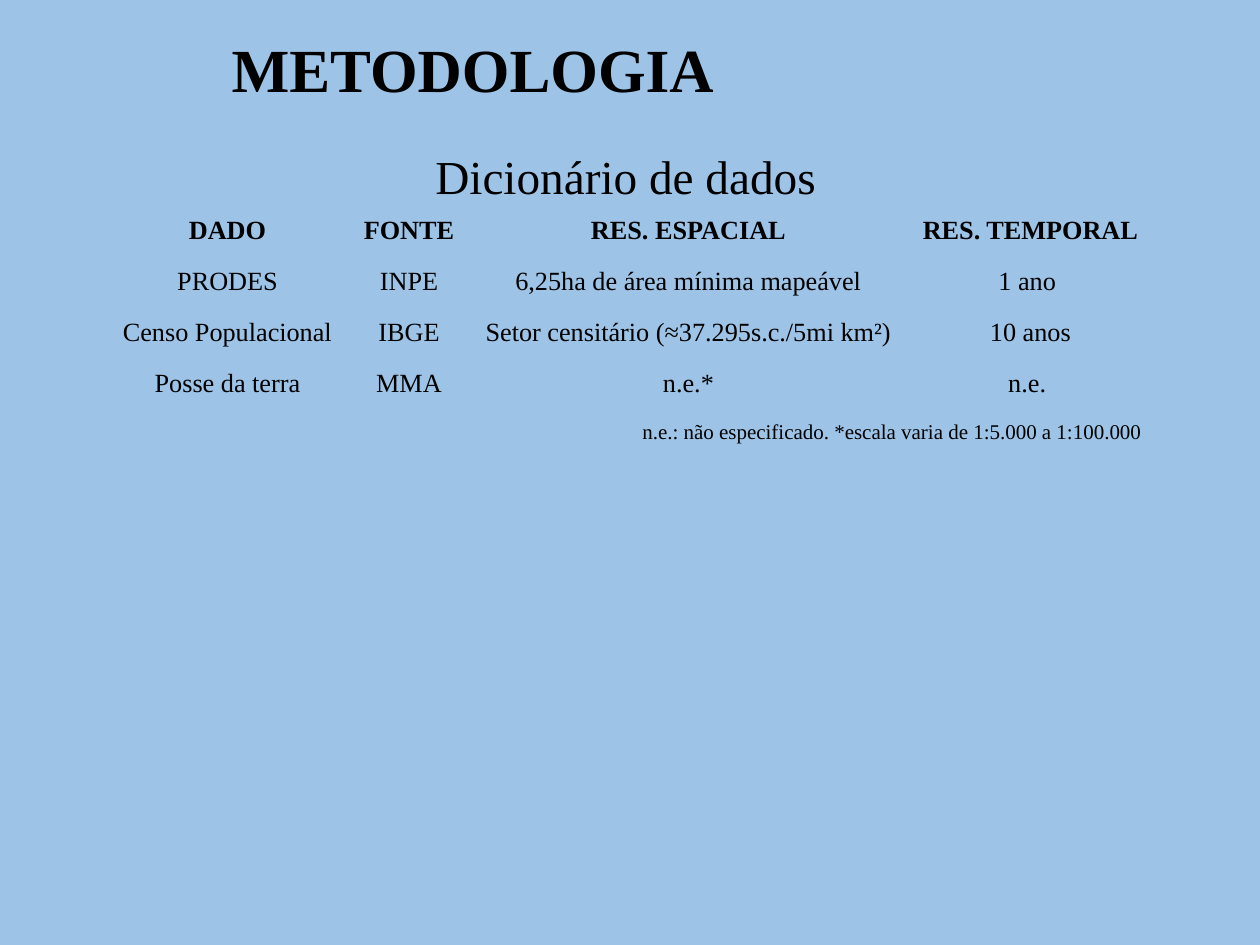
from typing import NamedTuple

from lxml import etree
from pptx import Presentation
from pptx.dml.color import RGBColor
from pptx.enum.text import MSO_ANCHOR, PP_ALIGN
from pptx.oxml.ns import qn
from pptx.util import Emu, Pt

EMU_PER_INCH = 914400
PX_PER_INCH = 126
FONT = "Times New Roman"
COLORS = {"background": "9DC3E6", "text": "000000"}
CENTER, JUSTIFY = PP_ALIGN.CENTER, PP_ALIGN.JUSTIFY
TOP, MIDDLE = MSO_ANCHOR.TOP, MSO_ANCHOR.MIDDLE
NO_STYLE_NO_GRID = "{2D5ABB26-0587-4C30-8999-92F81FD0307C}"


class Label(NamedTuple):
    text: str
    left: int
    top: int
    width: int
    height: int
    size: int
    align: PP_ALIGN = JUSTIFY
    anchor: MSO_ANCHOR = TOP
    bold: bool = False


LABELS = [
    Label("METODOLOGIA", 0, 20, 946, 105, 35, CENTER, MIDDLE, True),
    Label("Dicionário de dados", 423, 147, 413, 82, 27),
    Label("n.e.: não especificado. *escala varia de 1:5.000 a 1:100.000",
          630, 415, 683, 82, 12),
]

TABLE_LEFT, TABLE_TOP, ROW_HEIGHT = 107, 210, 51
COLUMN_WIDTHS = [241, 122, 437, 247]
CELL_SIZE = 15
ROWS = [
    ("DADO", "FONTE", "RES. ESPACIAL", "RES. TEMPORAL"),
    ("PRODES", "INPE", "6,25ha de área mínima mapeável", "1 ano "),
    ("Censo Populacional", "IBGE", "Setor censitário (≈37.295s.c./5mi km²)", "10 anos"),
    ("Posse da terra", "MMA", "n.e.*", "n.e. "),
]


def px(n: int) -> Emu:
    return Emu(round(n * EMU_PER_INCH / PX_PER_INCH))


def write(tf, text: str, size: int, align: PP_ALIGN, bold: bool):
    """Fill the first paragraph of a text frame and return it."""
    p = tf.paragraphs[0]
    p.text = text
    p.alignment = align
    p.font.name = FONT
    p.font.size = Pt(size)
    p.font.bold = bold
    p.font.color.rgb = RGBColor.from_string(COLORS["text"])
    return p


def add_label(slide, label: Label) -> None:
    sp = slide.shapes.add_textbox(px(label.left), px(label.top),
                                  px(label.width), px(label.height))
    tf = sp.text_frame
    tf.word_wrap = True
    tf.vertical_anchor = label.anchor
    p = write(tf, label.text, label.size, label.align, label.bold)
    p.line_spacing = 0.9


def add_dictionary_table(slide) -> None:
    frame = slide.shapes.add_table(
        len(ROWS), len(COLUMN_WIDTHS), px(TABLE_LEFT), px(TABLE_TOP),
        px(sum(COLUMN_WIDTHS)), px(ROW_HEIGHT * len(ROWS)))
    table = frame.table
    table.first_row = table.horz_banding = False
    tbl_pr = frame._element.graphic.graphicData.tbl.tblPr
    style = tbl_pr.find(qn("a:tableStyleId"))
    if style is None:
        style = etree.SubElement(tbl_pr, qn("a:tableStyleId"))
    style.text = NO_STYLE_NO_GRID

    for column, width in zip(table.columns, COLUMN_WIDTHS):
        column.width = px(width)
    for i, row in enumerate(ROWS):
        table.rows[i].height = px(ROW_HEIGHT)
        for j, text in enumerate(row):
            cell = table.cell(i, j)
            cell.fill.background()
            write(cell.text_frame, text, CELL_SIZE, CENTER, bold=i == 0)


def main() -> None:
    prs = Presentation()
    prs.slide_width, prs.slide_height = px(1260), px(945)
    slide = prs.slides.add_slide(prs.slide_layouts[6])
    fill = slide.background.fill
    fill.solid()
    fill.fore_color.rgb = RGBColor.from_string(COLORS["background"])

    add_dictionary_table(slide)
    for label in LABELS:
        add_label(slide, label)
    prs.save("out.pptx")


if __name__ == "__main__":
    main()
